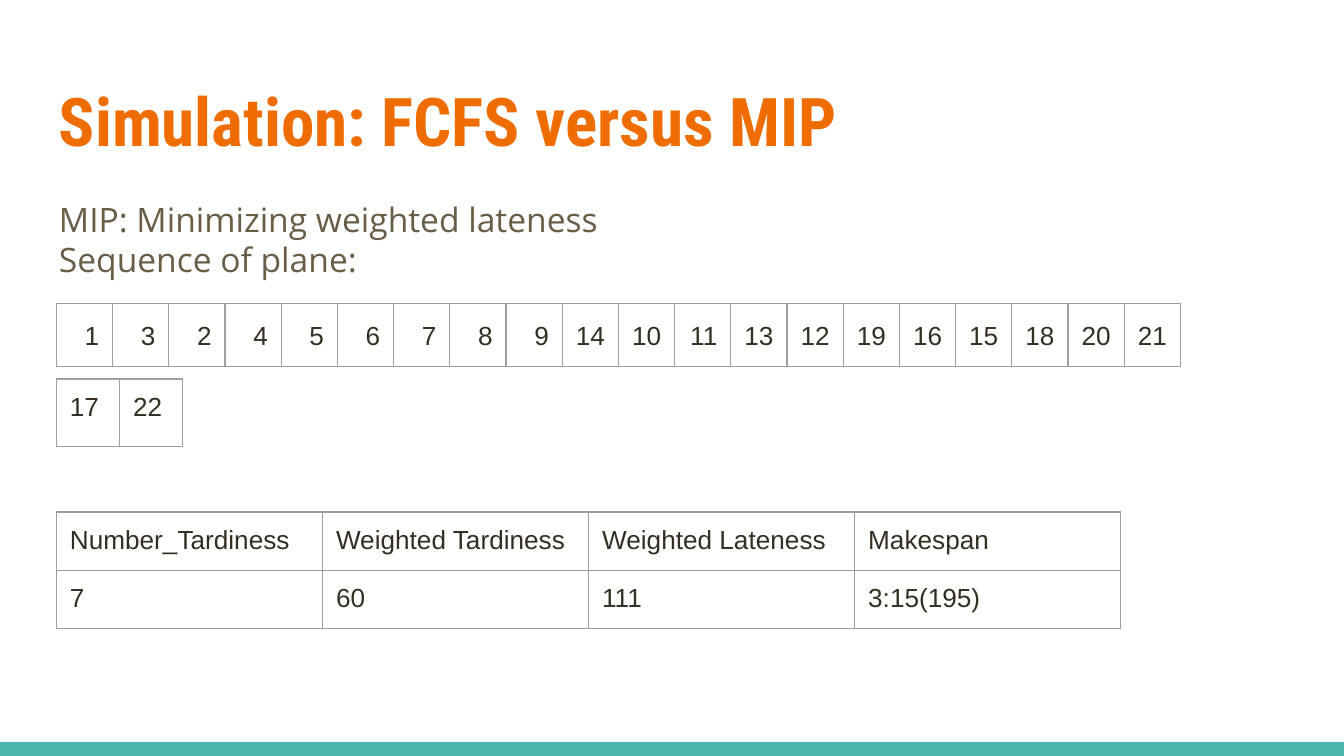
from lxml import etree
from pptx import Presentation
from pptx.dml.color import RGBColor
from pptx.enum.shapes import MSO_SHAPE
from pptx.enum.text import PP_ALIGN
from pptx.oxml.ns import qn
from pptx.util import Inches, Pt

RECTANGLE = MSO_SHAPE.RECTANGLE
LEFT, RIGHT = PP_ALIGN.LEFT, PP_ALIGN.RIGHT

TEAL = RGBColor(0x4D, 0xB6, 0xAC)
ORANGE = RGBColor(0xEF, 0x6C, 0x00)
BROWN = RGBColor(0x69, 0x5D, 0x46)
DARK = RGBColor(0x34, 0x2E, 0x23)
GRAY = RGBColor(0x9E, 0x9E, 0x9E)

MARGIN = Inches(0.1)


def format_text(frame, font, size, color, bold=False):
    for para in frame.paragraphs:
        for span in para.runs:
            span.font.name = font
            span.font.size = Pt(size)
            span.font.bold = bold
            span.font.color.rgb = color


def add_grid(page, top, width, row_height, rows, align=LEFT, spacing=None):
    """Add an unfilled table with thin gray borders and equal columns."""
    columns = len(rows[0])
    table = page.shapes.add_table(
        len(rows), columns, Inches(0.42), Inches(top),
        Inches(width), Inches(row_height * len(rows))).table
    table.first_row = table.horz_banding = False
    for column in table.columns:
        column.width = Inches(width / columns)
    for row, values in zip(table.rows, rows):
        for cell, value in zip(row.cells, values):
            cell.margin_left = cell.margin_right = MARGIN
            cell.margin_top = cell.margin_bottom = MARGIN
            cell.text = value
            para = cell.text_frame.paragraphs[0]
            para.alignment = align
            para.line_spacing = spacing
            format_text(cell.text_frame, "Arial", 14, DARK)
            properties = cell._tc.get_or_add_tcPr()
            for side in ("lnL", "lnR", "lnT", "lnB"):
                line = etree.SubElement(properties, qn(f"a:{side}"), w=str(Pt(0.75)))
                fill = etree.SubElement(line, qn("a:solidFill"))
                etree.SubElement(fill, qn("a:srgbClr"), val=str(GRAY))
            cell.fill.background()


deck = Presentation()
deck.slide_width = Inches(10)
deck.slide_height = Inches(10 * 9 / 16)
page = deck.slides.add_slide(deck.slide_layouts[6])

footer = page.shapes.add_shape(RECTANGLE, 0, Inches(5.52), Inches(10), Inches(0.11))
footer.shadow.inherit = False
footer.fill.solid()
footer.fill.fore_color.rgb = TEAL
footer.line.fill.background()

texts = [
    (0.49, 0.77, "Simulation: FCFS versus MIP", "Roboto Condensed", 36, ORANGE, True),
    (1.38, 3.61, "MIP: Minimizing weighted lateness\nSequence of plane:",
     "Open Sans", 18, BROWN, False),
]
for top, height, text, font, size, color, bold in texts:
    box = page.shapes.add_textbox(Inches(0.34), Inches(top), Inches(9.32), Inches(height))
    frame = box.text_frame
    frame.word_wrap = True
    frame.margin_left = frame.margin_right = MARGIN
    frame.margin_top = frame.margin_bottom = MARGIN
    frame.text = text
    format_text(frame, font, size, color, bold)

sequence = "1 3 2 4 5 6 7 8 9 14 10 11 13 12 19 16 15 18 20 21".split()
add_grid(page, 2.26, 8.37, 0.42, [sequence], align=RIGHT, spacing=1.15)
add_grid(page, 2.82, 0.94, 0.5, [["17", "22"]])
add_grid(page, 3.81, 7.92, 0.42, [
    ["Number_Tardiness", "Weighted Tardiness", "Weighted Lateness", "Makespan"],
    ["7", "60", "111", "3:15(195)"],
])

deck.save("out.pptx")
